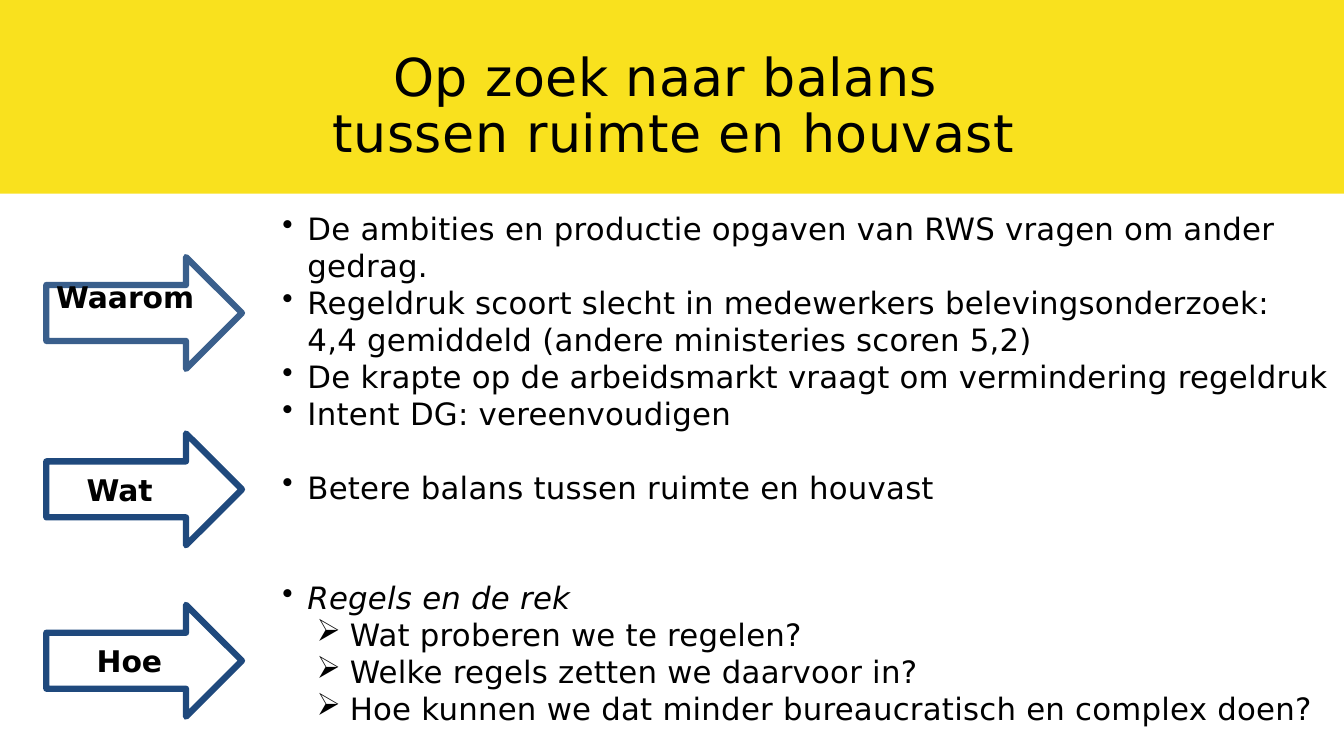
from pptx import Presentation
from pptx.dml.color import RGBColor
from pptx.enum import shapes, text
from pptx.oxml import ns, xmlchemy as xml
from pptx.util import Inches, Pt

FONT = "DejaVu Sans"
HUES = {"yellow": "F9E11E", "white": "FFFFFF", "black": "000000",
        "steel": "3A5F8C", "navy": "1F497D"}
TITLE = [("Op zoek naar balans ", 0.3), ("tussen ruimte en houvast", 0.4)]
# bullet text, level, space before in points, italic
POINTS = [
    ("De ambities en productie opgaven van RWS vragen om ander gedrag.", 0, 0, False),
    ("Regeldruk scoort slecht in medewerkers belevingsonderzoek:\v"
     "4,4 gemiddeld (andere ministeries scoren 5,2)", 0, 0, False),
    ("De krapte op de arbeidsmarkt vraagt om vermindering regeldruk", 0, 0, False),
    ("Intent DG: vereenvoudigen", 0, 0, False),
    ("Betere balans tussen ruimte en houvast", 0, 26.4, False),
    ("Regels en de rek", 0, 52.8, True),
    ("Wat proberen we te regelen?", 1, 0, False),
    ("Welke regels zetten we daarvoor in?", 1, 0, False),
    ("Hoe kunnen we dat minder bureaucratisch en complex doen?", 1, 0, False),
]
# level: mark, left margin, hanging indent
MARKS = {0: ("•", 0.25, 0.25), 1: ("➢", 0.67, 0.33)}
# label, top, line colour, left inset, bottom inset
ARROWS = [("Waarom", 2.55, "steel", 0.1, 0.37),
          ("Wat", 4.3, "navy", 0.4, 0.05),
          ("Hoe", 6, "navy", 0.5, 0.05)]


def hue(name):
    return RGBColor.from_string(HUES[name])


def write(para, words, size, bold=False, italic=False, gap=0):
    """Fill a paragraph; gap is the letter spacing in points."""
    para.text = words
    for run in para.runs:
        font = run.font
        font.name, font.size = FONT, Pt(size)
        font.bold, font.italic = bold, italic
        font.color.rgb = hue("black")
        if gap:
            run._r.get_or_add_rPr().set("spc", str(round(gap * 100)))


def mark(para, level):
    sign, left, hang = MARKS[level]
    para.level = level
    props = para._p.get_or_add_pPr()
    props.set("marL", str(Inches(left)))
    props.set("indent", str(-Inches(hang)))
    bullet = xml.OxmlElement("a:buChar")
    bullet.set("char", sign)
    props.append(bullet)


def frame(slide, box):
    """Add a wrapping text box without insets."""
    area = slide.shapes.add_textbox(*map(Inches, box)).text_frame
    area.word_wrap = True
    area.margin_left = area.margin_right = 0
    area.margin_top = area.margin_bottom = 0
    return area


def lines(area, items):
    """Yield a paragraph with each item."""
    for i, item in enumerate(items):
        yield (area.add_paragraph() if i else area.paragraphs[0]), item


def panel(slide, box):
    shape = slide.shapes.add_shape(shapes.MSO_SHAPE.RECTANGLE, *map(Inches, box))
    shape.shadow.inherit = False
    shape.fill.solid()
    shape.fill.fore_color.rgb = hue("white")
    shape.line.fill.background()


def title(slide, box):
    for para, (words, gap) in lines(frame(slide, box), TITLE):
        para.alignment = text.PP_ALIGN.CENTER
        para.line_spacing = Pt(40.3)
        write(para, words, 37.3, gap=gap)


def points(slide, box):
    for para, (words, level, space, italic) in lines(frame(slide, box), POINTS):
        if space:
            para.space_before = Pt(space)
        mark(para, level)
        write(para, words, 22, italic=italic, gap=0.2)


def arrow(slide, box, label, color, left, bottom):
    shape = slide.shapes.add_shape(shapes.MSO_SHAPE.RIGHT_ARROW, *map(Inches, box))
    shape.shadow.inherit = False
    shape.fill.background()
    shape.line.color.rgb = hue(color)
    shape.line.width = Pt(4.5)
    shape.line._get_or_add_ln().append(xml.OxmlElement("a:round"))
    area = shape.text_frame
    area.word_wrap = True
    area.vertical_anchor = text.MSO_ANCHOR.MIDDLE
    area.margin_left, area.margin_bottom = Inches(left), Inches(bottom)
    para = area.paragraphs[0]
    para.alignment = text.PP_ALIGN.LEFT
    write(para, label, 21.3, bold=True)


def main():
    deck = Presentation()
    deck.slide_width, deck.slide_height = Inches(13.33), Inches(7.5)
    slide = deck.slides.add_slide(deck.slide_layouts[6])
    back = slide.background.fill
    back.solid()
    back.fore_color.rgb = hue("yellow")
    panel(slide, (0, 1.92, 13.33, 5.58))
    title(slide, (0.71, 0.5, 11.95, 1.13))
    points(slide, (2.8, 2.08, 10.5, 5.2))
    for label, top, color, left, bottom in ARROWS:
        arrow(slide, (0.46, top, 1.94, 1.11), label, color, left, bottom)
    deck.save("out.pptx")


if __name__ == "__main__":
    main()
